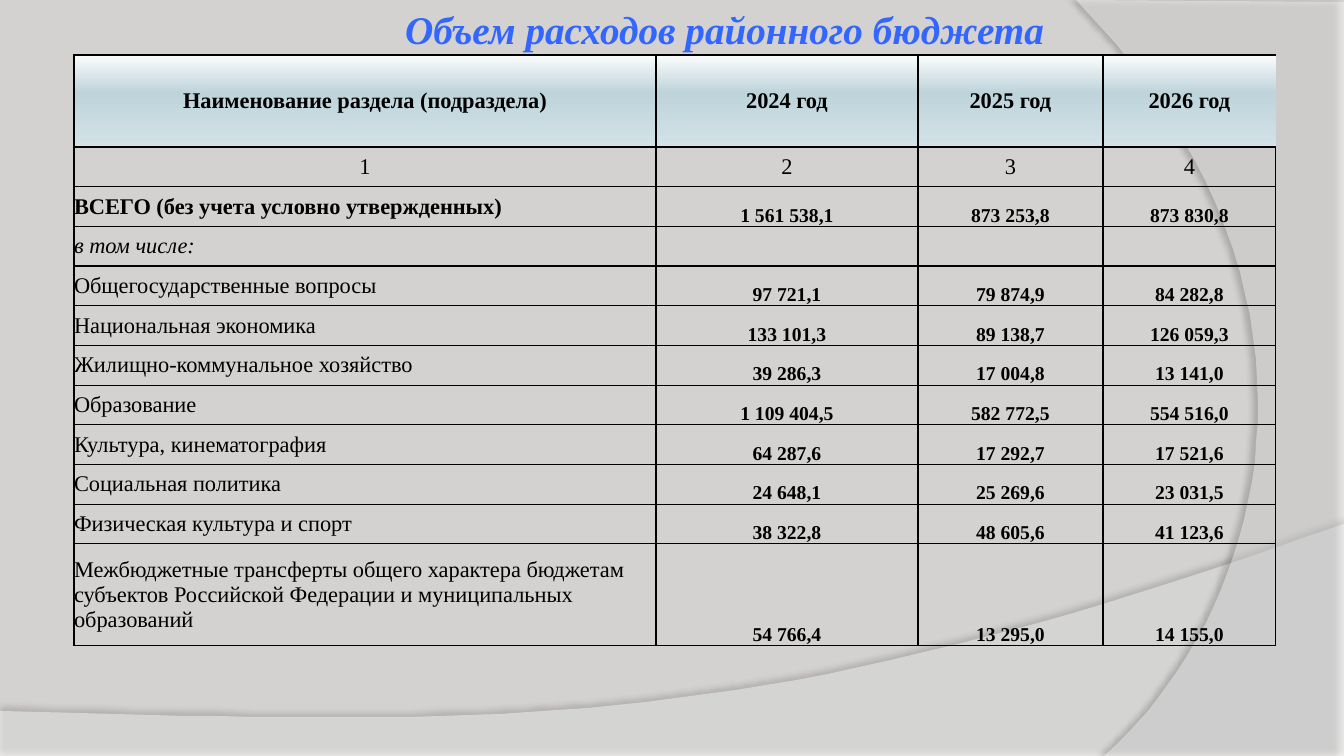
from lxml import etree
from pptx import Presentation, util as u
from pptx.dml import color
from pptx.enum import text
from pptx.oxml import parse_xml
from pptx.oxml.ns import nsdecls, qn

COLORS = {"background": "D4D2D0", "wave": "FFFFFF", "title": "3366FF", "ink": "000000"}
HEADER_GRADIENT = [(2, "F8FAFB"), (41, "BED4DB"), (100, "D3E2E7")]
FONT = "Times New Roman"
CENTER, LEFT, JUSTIFY = text.PP_ALIGN.CENTER, text.PP_ALIGN.LEFT, text.PP_ALIGN.JUSTIFY
MIDDLE, BOTTOM = text.MSO_ANCHOR.MIDDLE, text.MSO_ANCHOR.BOTTOM
EMU_PER_PX = 914400 / 100.8

TITLE = "Объем расходов районного бюджета"
HEADER = ["Наименование раздела (подраздела)", "2024 год", "2025 год", "2026 год"]
NUMBERS = ["1", "2", "3", "4"]
TOTAL = ["ВСЕГО (без учета условно утвержденных)", "1 561 538,1", "873 253,8", "873 830,8"]
INCLUDING = ["в том числе:", "", "", ""]
SECTIONS = [
    ["Общегосударственные вопросы", "97 721,1", "79 874,9", "84 282,8"],
    ["Национальная экономика", "133 101,3", "89 138,7", "126 059,3"],
    ["Жилищно-коммунальное хозяйство", "39 286,3", "17 004,8", "13 141,0"],
    ["Образование", "1 109 404,5", "582 772,5", "554 516,0"],
    ["Культура, кинематография", "64 287,6", "17 292,7", "17 521,6"],
    ["Социальная политика", "24 648,1", "25 269,6", "23 031,5"],
    ["Физическая культура и спорт", "38 322,8", "48 605,6", "41 123,6"],
    ["Межбюджетные трансферты общего характера бюджетам субъектов Российской Федерации "
     "и муниципальных образований", "54 766,4", "13 295,0", "14 155,0"],
]
ROWS = [HEADER, NUMBERS, TOTAL, INCLUDING, *SECTIONS]
COLUMN_WIDTHS = [582, 262, 185, 173]
HEADER_HEIGHT, MIDDLE_HEIGHT, LAST_HEIGHT = 92, 397, 102


def px(length):
    return u.Emu(round(length * EMU_PER_PX))


def set_all(target, values):
    for name, value in values.items():
        setattr(target, name, value)


def bezier(start, first, second, end, steps=40):
    for step in range(1, steps + 1):
        t = step / steps
        weights = ((1 - t) ** 3, 3 * t * (1 - t) ** 2, 3 * t * t * (1 - t), t ** 3)
        yield tuple(
            sum(weight * point[axis] for weight, point in zip(weights, (start, first, second, end)))
            for axis in (0, 1)
        )


class BudgetSlide:
    def __init__(self, presentation):
        self.slide = presentation.slides.add_slide(presentation.slide_layouts[5])
        fill = self.slide.background.fill
        fill.solid()
        fill.fore_color.rgb = color.RGBColor.from_string(COLORS["background"])

    def add_words(self, paragraph, words, align, size, bold=False, italic=False, ink="ink"):
        paragraph.alignment = align
        run = paragraph.add_run()
        run.text = words
        set_all(run.font, {"name": FONT, "size": u.Pt(size), "bold": bold, "italic": italic})
        run.font.color.rgb = color.RGBColor.from_string(COLORS[ink])

    def wave(self, corners, curve, opacity, shadow_opacity, distance, angle):
        builder = self.slide.shapes.build_freeform(*corners[0], scale=EMU_PER_PX)
        builder.add_line_segments([*corners[1:], *bezier(corners[-1], *curve)], close=True)
        shape = builder.convert_to_shape()
        shape.line.fill.background()
        shape.fill.solid()
        shape.fill.fore_color.rgb = color.RGBColor.from_string(COLORS["wave"])
        tint = shape._element.spPr.find(qn("a:solidFill"))[0]
        etree.SubElement(tint, qn("a:alpha"), val=str(opacity * 1000))
        shape._element.spPr.append(parse_xml(
            f'<a:effectLst {nsdecls("a")}><a:outerShdw blurRad="{u.Pt(4)}" '
            f'dist="{u.Pt(distance)}" dir="{angle * 60000}" algn="ctr" rotWithShape="0">'
            f'<a:srgbClr val="{COLORS["ink"]}"><a:alpha val="{shadow_opacity * 1000}"/>'
            '</a:srgbClr></a:outerShdw></a:effectLst>'))

    def title(self, words, left, top, width, height):
        shape = self.slide.shapes.title
        set_all(shape, {"left": px(left), "top": px(top), "width": px(width), "height": px(height)})
        set_all(shape.text_frame, {
            "word_wrap": True, "auto_size": text.MSO_AUTO_SIZE.NONE,
            "vertical_anchor": text.MSO_ANCHOR.TOP, "margin_top": px(5), "margin_bottom": 0})
        self.add_words(shape.text_frame.paragraphs[0], words, CENTER, 28, True, True, "title")
        self.slide.shapes._spTree.append(shape._element)

    def borders(self, cell, hidden=""):
        for index, side in enumerate("LRTB"):
            paint = "<a:noFill/>" if side == hidden else (
                f'<a:solidFill><a:srgbClr val="{COLORS["ink"]}"/></a:solidFill>')
            cell._tc.get_or_add_tcPr().insert(index, parse_xml(
                f'<a:ln{side} {nsdecls("a")} w="{u.Pt(1)}">{paint}</a:ln{side}>'))

    def header_fill(self, cell):
        stops = "".join(f'<a:gs pos="{position * 1000}"><a:srgbClr val="{tone}"/></a:gs>'
                        for position, tone in HEADER_GRADIENT)
        cell._tc.get_or_add_tcPr().append(parse_xml(
            f'<a:gradFill {nsdecls("a")} rotWithShape="1"><a:gsLst>{stops}</a:gsLst>'
            '<a:lin ang="5400000" scaled="0"/></a:gradFill>'))

    def cell(self, cell, words, row, column):
        is_header, is_value = row is HEADER, column > 0 and row not in (HEADER, NUMBERS)
        margin = px(1) if is_value else 0
        set_all(cell, {
            "margin_left": margin, "margin_right": margin, "margin_top": margin,
            "margin_bottom": 0, "vertical_anchor": BOTTOM if is_value else MIDDLE})
        if is_header:
            self.header_fill(cell)
        else:
            cell.fill.background()
        self.borders(cell, "R" if is_header and column == len(HEADER) - 1 else "")
        if not words:
            return
        if is_value or row in (HEADER, NUMBERS):
            align = CENTER
        else:
            align = JUSTIFY if row in (TOTAL, INCLUDING) else LEFT
        self.add_words(cell.text_frame.paragraphs[0], words, align, 14 if is_value else 16,
                       is_value or row in (HEADER, TOTAL), row is INCLUDING)

    def table(self, rows, left, top):
        height = HEADER_HEIGHT + MIDDLE_HEIGHT + LAST_HEIGHT
        table = self.slide.shapes.add_table(
            len(rows), len(COLUMN_WIDTHS), px(left), px(top),
            px(sum(COLUMN_WIDTHS)), px(height)).table
        set_all(table, {"first_row": False, "horz_banding": False})
        for column, width in zip(table.columns, COLUMN_WIDTHS):
            column.width = px(width)
        even = MIDDLE_HEIGHT / (len(rows) - 2)
        heights = [HEADER_HEIGHT, *[even] * (len(rows) - 2), LAST_HEIGHT]
        for row_index, (row, row_height) in enumerate(zip(rows, heights)):
            table.rows[row_index].height = px(row_height)
            for column_index, words in enumerate(row):
                self.cell(table.cell(row_index, column_index), words, row, column_index)


def main():
    presentation = Presentation()
    set_all(presentation, {"slide_width": px(1344), "slide_height": px(756)})
    slide = BudgetSlide(presentation)
    slide.wave([(0, 711), (0, 756), (1344, 756), (1344, 524)],
               [(751, 735), (525, 725), (0, 711)], 45, 35, 3.5, 270)
    slide.wave([(1344, 2), (1344, 756), (1104, 756)],
               [(1256, 624), (1368, 302), (1076, 0)], 40, 45, 4, 180)
    slide.title(TITLE, 278, 0, 893, 55)
    slide.table(ROWS, 74, 55)
    presentation.save("out.pptx")


if __name__ == "__main__":
    main()
